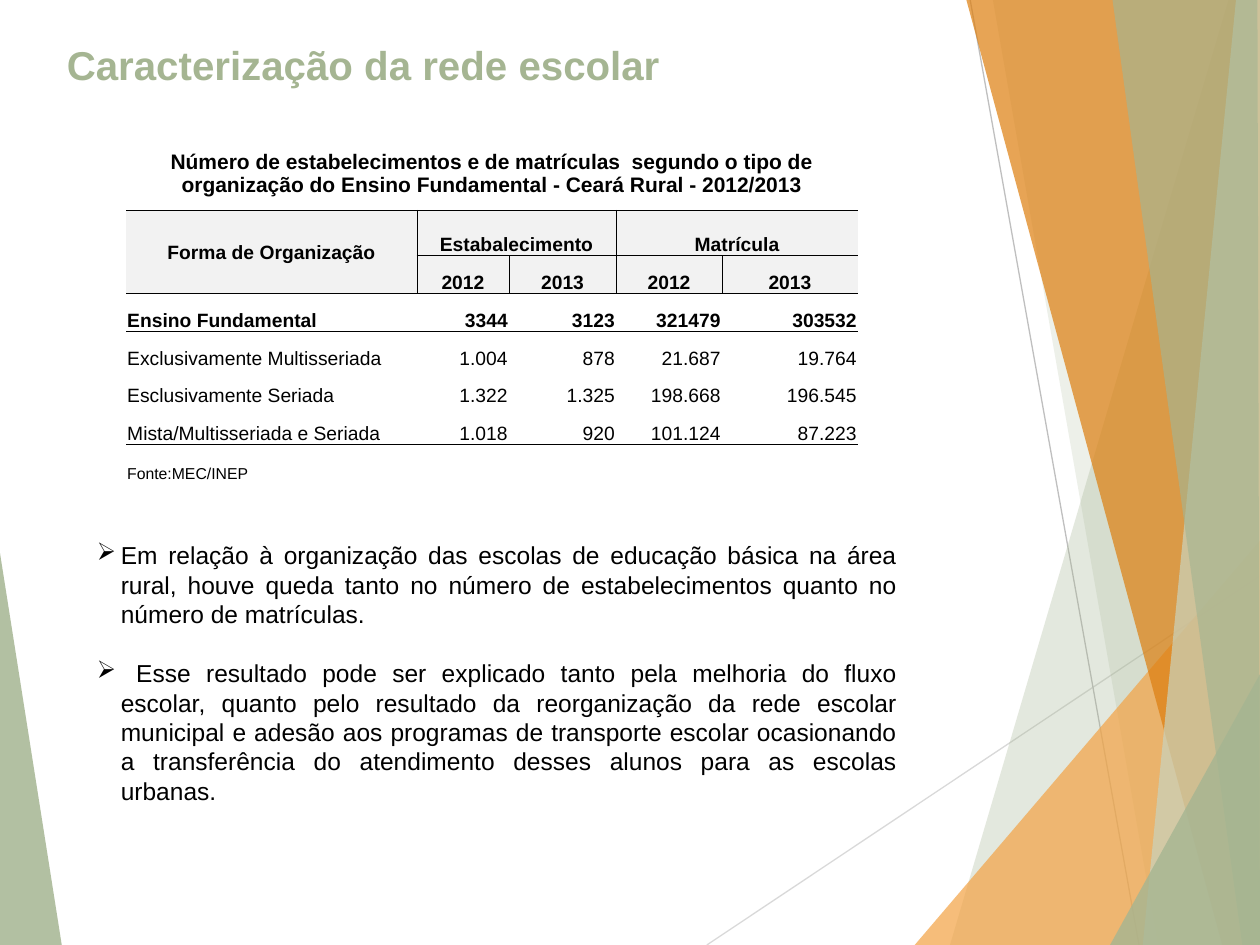
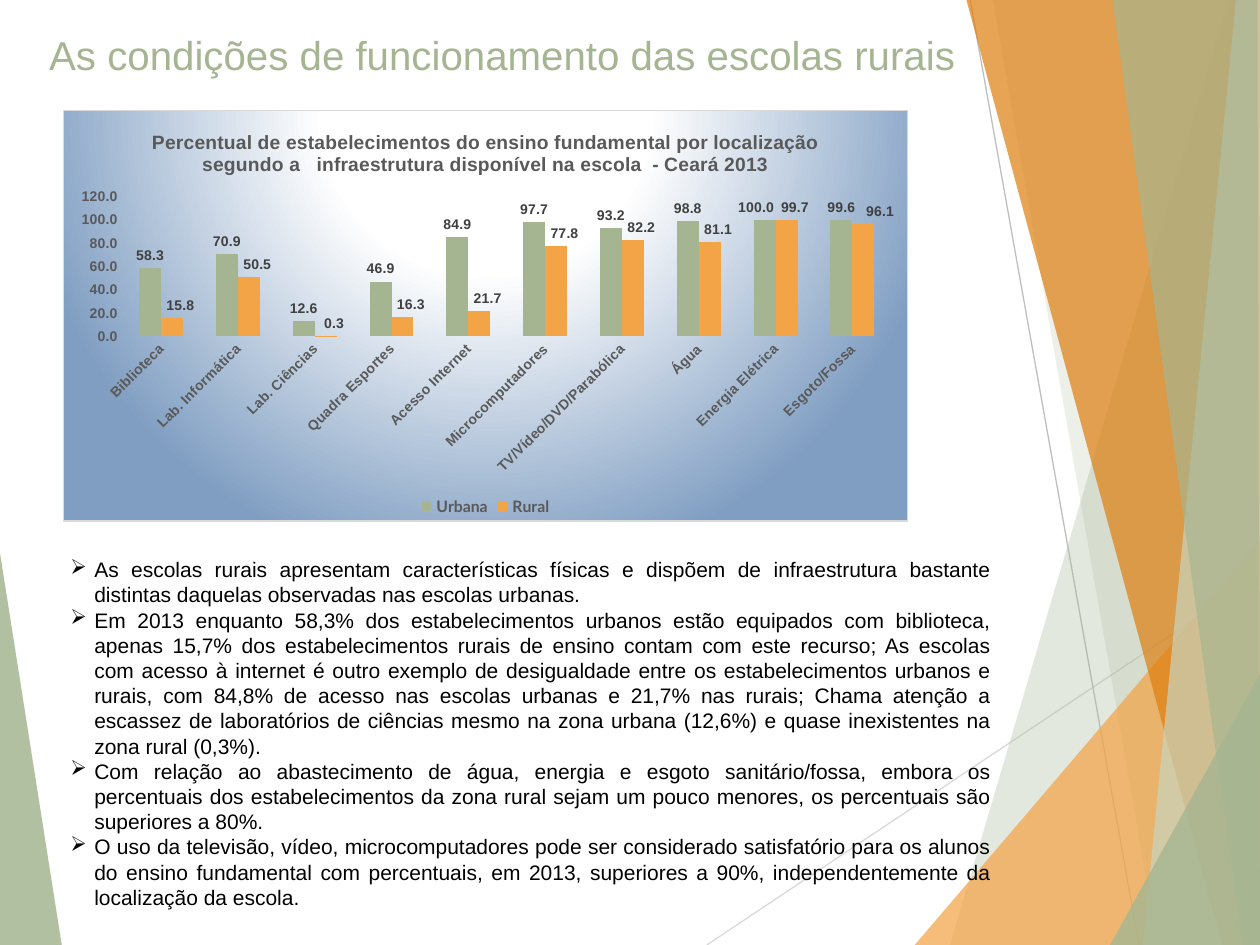
from lxml import etree
from pptx import Presentation
from pptx.chart.data import CategoryChartData
from pptx.dml.color import RGBColor
from pptx.enum import chart as chart_enum, shapes as shape_enum, text as text_enum
from pptx.oxml import parse_xml
from pptx.oxml.ns import nsdecls, qn
from pptx.util import Inches, Pt

SAGE = RGBColor(0xA5, 0xB5, 0x92)
PALE_SAGE = RGBColor(0xC9, 0xD3, 0xBE)
ORANGE = RGBColor(0xF3, 0xA4, 0x47)
DARK_ORANGE = RGBColor(0xDD, 0x7E, 0x0E)
BLACK = RGBColor(0, 0, 0)
LABEL_GREY = RGBColor(0x40, 0x40, 0x40)
AXIS_GREY = RGBColor(0x59, 0x59, 0x59)
RULE_GREY = RGBColor(0xBF, 0xBF, 0xBF)
LIGHT_GREY = RGBColor(0xD9, 0xD9, 0xD9)
HEADER_GREY = RGBColor(0xF2, 0xF2, 0xF2)
FONT = "Arial"
LEGEND_FONT = "Lato"
WIDTH, HEIGHT = 10, 7.5

# Background, back to front: (colour, opacity in percent, corner points)
LEFT_WEDGE = (SAGE, 85, [(0, 4.39), (0.49, HEIGHT), (0, HEIGHT)])
THIN_LINES = [
    (LIGHT_GREY, (5.61, HEIGHT), (WIDTH, 4.57)),
    (RULE_GREY, (7.7, 0), (9.04, HEIGHT)),
]
RIGHT_FACETS = [
    (SAGE, 30, [(9.75, 0), (7.54, HEIGHT), (WIDTH, HEIGHT), (WIDTH, 0)]),
    (SAGE, 20, [(7.88, 0), (9.19, HEIGHT), (WIDTH, HEIGHT), (WIDTH, 0)]),
    (ORANGE, 72, [(7.26, HEIGHT), (WIDTH, 4.29), (WIDTH, HEIGHT)]),
    (DARK_ORANGE, 70, [(7.67, 0), (9.7, HEIGHT), (WIDTH, HEIGHT), (WIDTH, 0)]),
    (PALE_SAGE, 70, [(9.81, 0), (9.07, HEIGHT), (WIDTH, HEIGHT), (WIDTH, 0)]),
    (SAGE, 65, [(8.83, 0), (9.86, HEIGHT), (WIDTH, HEIGHT), (9.98, 0)]),
    (SAGE, 80, [(8.81, HEIGHT), (WIDTH, 5.35), (WIDTH, HEIGHT)]),
]

NETWORK = {
    "title": "Caracterização da rede escolar",
    "title_box": (0.43, 0.25, 7.23, 0.53),
    "title_bold": True,
    "bullets_box": (0.67, 4.24, 6.55, 2.22),
    "bullet_size": 14,
    "bullet_gap": 16.8,
    "bullets": [
        "Em relação à organização das escolas de educação básica na área rural, houve queda tanto "
        "no número de estabelecimentos quanto no número de matrículas.",
        " Esse resultado pode ser explicado tanto pela melhoria do fluxo escolar, quanto pelo "
        "resultado da reorganização da rede escolar municipal e adesão aos programas de transporte "
        "escolar ocasionando a transferência do atendimento desses alunos para as escolas urbanas.",
    ],
}
CONDITIONS = {
    "title": "As condições de funcionamento das escolas rurais",
    "title_box": (0.29, 0.17, 7.47, 0.53),
    "title_bold": False,
    "bullets_box": (0.46, 4.37, 7.51, 2.93),
    "bullet_size": 12,
    "bullet_gap": 0,
    "bullets": [
        "As escolas rurais apresentam características físicas e dispõem de infraestrutura bastante "
        "distintas daquelas observadas nas escolas urbanas.",
        "Em 2013 enquanto 58,3% dos estabelecimentos urbanos estão equipados com biblioteca, apenas "
        "15,7% dos estabelecimentos rurais de ensino contam com este recurso; As escolas com acesso "
        "à internet é outro exemplo de desigualdade entre os estabelecimentos urbanos e rurais, com "
        "84,8% de acesso nas escolas urbanas e 21,7% nas rurais; Chama atenção a escassez de "
        "laboratórios de ciências mesmo na zona urbana (12,6%) e quase inexistentes na zona rural "
        "(0,3%).",
        "Com relação ao abastecimento de água, energia e esgoto sanitário/fossa, embora os "
        "percentuais dos estabelecimentos da zona rural sejam um pouco menores, os percentuais são "
        "superiores a 80%.",
        "O uso da televisão, vídeo, microcomputadores pode ser considerado satisfatório para os "
        "alunos do ensino fundamental com percentuais, em 2013, superiores a 90%, "
        "independentemente da localização da escola.",
    ],
}

TABLE_BOX = (1, 1.08, 5.81, 2.77)
COLUMN_WIDTHS = [2.31, 0.73, 0.85, 0.84, 1.08]
ROW_HEIGHTS = [0.59, 0.36] + [0.3] * 6
TABLE_ROWS = [
    ["Número de estabelecimentos e de matrículas  segundo o tipo de organização do Ensino "
     "Fundamental - Ceará Rural - 2012/2013"],
    ["Forma de Organização", "Estabalecimento", "", "Matrícula", ""],
    ["", "2012", "2013", "2012", "2013"],
    ["Ensino Fundamental", "3344", "3123", "321479", "303532"],
    ["Exclusivamente Multisseriada", "1.004", "878", "21.687", "19.764"],
    ["Esclusivamente Seriada", "1.322", "1.325", "198.668", "196.545"],
    ["Mista/Multisseriada e Seriada", "1.018", "920", "101.124", "87.223"],
    ["Fonte:MEC/INEP"],
]
MERGES = [((0, 0), (0, 4)), ((1, 0), (2, 0)), ((1, 1), (1, 2)), ((1, 3), (1, 4))]
CAPTION_ROW, HEADER_ROWS, TOTAL_ROW, SOURCE_ROW = 0, (1, 2), 3, 7
ROWS_WITH_TOP_RULE = (1, 2, 3, 7)
NO_GRID_STYLE = "{2D5ABB26-0587-4C30-8999-92F81FD0307C}"

CHART_BOX = (0.5, 0.87, 6.71, 3.27)
CHART_TITLE = ("Percentual de estabelecimentos do ensino fundamental por localização segundo a   "
               "infraestrutura disponível na escola  - Ceará 2013")
FACILITIES = ["Biblioteca", "Lab. Informática", "Lab. Ciências", "Quadra Esportes",
              "Acesso Internet", "Microcomputadores", "TV/Vídeo/DVD/Parabólica", "Água",
              "Energia Elétrica", "Esgoto/Fossa"]
# Label shifts are fractions of the chart width, by point index
SERIES = [
    ("Urbana", SAGE, [58.3, 70.9, 12.6, 46.9, 84.9, 97.7, 93.2, 98.8, 100, 99.6], {8: -0.01}),
    ("Rural", ORANGE, [15.8, 50.5, 0.3, 16.3, 21.7, 77.8, 82.2, 81.1, 99.7, 96.1],
     {**dict.fromkeys(range(9), 0.01), 9: 0.02}),
]
PLOT_AREA = {"x": 0.07, "y": 0.21, "w": 0.91, "h": 0.34}
CHART_FRAME = f"""<c:spPr {nsdecls("c", "a")}>
  <a:gradFill><a:gsLst>
    <a:gs pos="0"><a:srgbClr val="FFFFFF"/></a:gs>
    <a:gs pos="35000"><a:srgbClr val="FFFFFF"/></a:gs>
    <a:gs pos="100000"><a:srgbClr val="809EC2"/></a:gs>
  </a:gsLst><a:path path="circle">
    <a:fillToRect l="50000" t="-80000" r="50000" b="180000"/>
  </a:path></a:gradFill>
  <a:ln w="9525"><a:solidFill><a:srgbClr val="{LIGHT_GREY}"/></a:solidFill></a:ln>
</c:spPr>"""


def inches(values):
    return [Inches(value) for value in values]


def set_font(font, size, color=BLACK, bold=False, name=FONT):
    font.color.rgb = color
    for attribute, value in {"size": Pt(size), "bold": bold, "name": name}.items():
        setattr(font, attribute, value)


def add_facet(slide, color, opacity, points):
    start, *others = [inches(point) for point in points]
    builder = slide.shapes.build_freeform(*start)
    builder.add_line_segments(others, close=True)
    facet = builder.convert_to_shape()
    facet.shadow.inherit = False
    facet.fill.solid()
    facet.fill.fore_color.rgb = color
    facet.line.fill.background()
    color_element = next(facet.element.spPr.iter(qn("a:srgbClr")))
    etree.SubElement(color_element, qn("a:alpha"), val=str(opacity * 1000))
    return facet


def add_thin_line(slide, color, start, end):
    line = slide.shapes.add_connector(
        shape_enum.MSO_CONNECTOR.STRAIGHT, *inches(start + end))
    line.line.color.rgb = color
    line.line.width = Pt(0.75)
    etree.SubElement(line.element.spPr, qn("a:effectLst"))
    return line


def add_background(layout, slide):
    """Draw the facets on the slide, then move them to the back of its layout."""
    parts = [add_facet(slide, *LEFT_WEDGE)]
    parts += [add_thin_line(slide, *line) for line in THIN_LINES]
    parts += [add_facet(slide, *facet) for facet in RIGHT_FACETS]
    for position, part in enumerate(parts, start=2):
        layout.shapes.element.insert(position, part.element)


def add_title(slide, content):
    title = slide.shapes.title
    title.left, title.top, title.width, title.height = inches(content["title_box"])
    frame = title.text_frame
    frame.text = content["title"]
    frame.auto_size = text_enum.MSO_AUTO_SIZE.NONE
    frame.vertical_anchor = text_enum.MSO_ANCHOR.MIDDLE
    paragraph = frame.paragraphs[0]
    paragraph.alignment = text_enum.PP_ALIGN.LEFT
    set_font(paragraph.runs[0].font, 23, SAGE, content["title_bold"])


def add_bullets(slide, content):
    frame = slide.shapes.add_textbox(*inches(content["bullets_box"])).text_frame
    frame.word_wrap = True
    size = content["bullet_size"]
    for index, bullet in enumerate(content["bullets"]):
        paragraph = frame.add_paragraph() if index else frame.paragraphs[0]
        run = paragraph.add_run()
        run.text = bullet
        set_font(run.font, size)
        paragraph.alignment = text_enum.PP_ALIGN.JUSTIFY
        paragraph.line_spacing = Pt(1.2 * size)
        paragraph.space_after = Pt(content["bullet_gap"])
        properties = paragraph._p.get_or_add_pPr()
        properties.set("marL", str(Inches(0.19)))
        properties.set("indent", str(-Inches(0.19)))
        etree.SubElement(properties, qn("a:buChar"), char="➢")


def border_sides(row, column):
    sides = []
    if row in HEADER_ROWS:
        sides += ["L"] if column > 0 else []
        sides += ["R"] if column + TABLE_ROWS[row][column + 1:].count("") < 4 else []
    sides += ["T"] if row in ROWS_WITH_TOP_RULE else []
    sides += ["B"] if row + 1 in ROWS_WITH_TOP_RULE else []
    return sides


def add_borders(cell, sides):
    properties = cell._tc.get_or_add_tcPr()
    for position, side in enumerate(sides):
        properties.insert(position, parse_xml(
            f'<a:ln{side} {nsdecls("a")} w="6350"><a:solidFill><a:srgbClr val="{BLACK}"/>'
            f'</a:solidFill></a:ln{side}>'))


def format_cell(cell, row, column):
    for side, margin in {"left": 0.01, "right": 0.01, "top": 0.01, "bottom": 0}.items():
        setattr(cell, f"margin_{side}", Inches(margin))
    centred = row == CAPTION_ROW or row in HEADER_ROWS
    middle = row == CAPTION_ROW or (row, column) == (1, 0)
    cell.vertical_anchor = text_enum.MSO_ANCHOR.MIDDLE if middle else text_enum.MSO_ANCHOR.BOTTOM
    paragraph = cell.text_frame.paragraphs[0]
    align = text_enum.PP_ALIGN
    paragraph.alignment = align.CENTER if centred else align.RIGHT if column else align.LEFT
    set_font(paragraph.font, {CAPTION_ROW: 12, SOURCE_ROW: 9}.get(row, 11), bold=row <= TOTAL_ROW)
    for run in paragraph.runs:
        set_font(run.font, {CAPTION_ROW: 12, SOURCE_ROW: 9}.get(row, 11), bold=row <= TOTAL_ROW)
    if row in HEADER_ROWS:
        cell.fill.solid()
        cell.fill.fore_color.rgb = HEADER_GREY
    else:
        cell.fill.background()
    if not cell.is_spanned:
        add_borders(cell, border_sides(row, column))


def add_enrolment_table(slide):
    frame = slide.shapes.add_table(len(ROW_HEIGHTS), len(COLUMN_WIDTHS), *inches(TABLE_BOX))
    next(frame.element.iter(qn("a:tableStyleId"))).text = NO_GRID_STYLE
    table = frame.table
    table.first_row = table.horz_banding = False
    for column, width in zip(table.columns, COLUMN_WIDTHS):
        column.width = Inches(width)
    for row, height in zip(table.rows, ROW_HEIGHTS):
        row.height = Inches(height)
    for start, end in MERGES:
        table.cell(*start).merge(table.cell(*end))
    for row, texts in enumerate(TABLE_ROWS):
        for column in range(len(COLUMN_WIDTHS)):
            cell = table.cell(row, column)
            if column < len(texts):
                cell.text = texts[column]
            format_cell(cell, row, column)


def format_series(series, color, shifts):
    series.format.fill.solid()
    series.format.fill.fore_color.rgb = color
    labels = series.data_labels
    for attribute, value in {"show_value": True, "number_format": "0.0",
                             "number_format_is_linked": False,
                             "position": chart_enum.XL_LABEL_POSITION.OUTSIDE_END}.items():
        setattr(labels, attribute, value)
    set_font(labels.font, 8, LABEL_GREY, True)
    for index, shift in shifts.items():
        label = series.points[index].data_label
        set_font(label.font, 8, LABEL_GREY, True)
        label.position = chart_enum.XL_LABEL_POSITION.OUTSIDE_END
    for label_element, shift in zip(series._element.iter(qn("c:dLbl")), shifts.values()):
        label_element.insert(1, manual_layout({"x": shift, "y": 0}))


def manual_layout(values, target=""):
    settings = "".join(f'<c:{key} val="{value}"/>' for key, value in values.items())
    return parse_xml(f'<c:layout {nsdecls("c")}><c:manualLayout>{target}{settings}'
                     "</c:manualLayout></c:layout>")


def format_plot_area(chart):
    plot_area = next(chart.element.iter(qn("c:plotArea")))
    for layout in plot_area.findall(qn("c:layout")):
        plot_area.remove(layout)
    target = ('<c:layoutTarget val="inner"/><c:xMode val="edge"/><c:yMode val="edge"/>')
    plot_area.insert(0, manual_layout(PLOT_AREA, target))
    plot_area.append(parse_xml(f'<c:spPr {nsdecls("c", "a")}><a:noFill/></c:spPr>'))
    chart.element.find(qn("c:chart")).addnext(parse_xml(CHART_FRAME))


def add_facilities_chart(slide):
    data = CategoryChartData(number_format="0.0")
    data.categories = FACILITIES
    for name, _, values, _ in SERIES:
        data.add_series(name, values)
    chart = slide.shapes.add_chart(
        chart_enum.XL_CHART_TYPE.COLUMN_CLUSTERED, *inches(CHART_BOX), data).chart
    set_font(chart.font, 10, name=LEGEND_FONT)
    chart.has_title = True
    chart.chart_title.include_in_layout = False
    chart.chart_title.text_frame.text = CHART_TITLE
    set_font(chart.chart_title.text_frame.paragraphs[0].runs[0].font, 11, AXIS_GREY, True)
    chart.has_legend = True
    chart.legend.position = chart_enum.XL_LEGEND_POSITION.BOTTOM
    chart.legend.include_in_layout = False
    set_font(chart.legend.font, 9, AXIS_GREY, True, LEGEND_FONT)
    plot = chart.plots[0]
    plot.gap_width, plot.overlap, plot.vary_by_categories = 150, 0, False
    for axis in (chart.category_axis, chart.value_axis):
        axis.has_major_gridlines = False
        axis.major_tick_mark = axis.minor_tick_mark = chart_enum.XL_TICK_MARK.NONE
        axis.format.line.fill.background()
        set_font(axis.tick_labels.font, 8, AXIS_GREY, True)
    category_text = next(chart.element.iter(qn("c:catAx"))).find(qn("c:txPr"))
    category_text.find(qn("a:bodyPr")).set("rot", "-2700000")
    value_axis = chart.value_axis
    value_axis.minimum_scale, value_axis.maximum_scale, value_axis.major_unit = 0, 120, 20
    value_axis.tick_labels.number_format = "0.0"
    value_axis.tick_labels.number_format_is_linked = False
    for series, (_, color, _, shifts) in zip(plot.series, SERIES):
        format_series(series, color, shifts)
    format_plot_area(chart)


def main():
    presentation = Presentation()
    presentation.slide_width, presentation.slide_height = inches((WIDTH, HEIGHT))
    layout = presentation.slide_layouts[5]
    for content, add_figure in ((NETWORK, add_enrolment_table), (CONDITIONS, add_facilities_chart)):
        slide = presentation.slides.add_slide(layout)
        if content is NETWORK:
            add_background(layout, slide)
        add_title(slide, content)
        add_figure(slide)
        add_bullets(slide, content)
    presentation.save("out.pptx")


if __name__ == "__main__":
    main()
